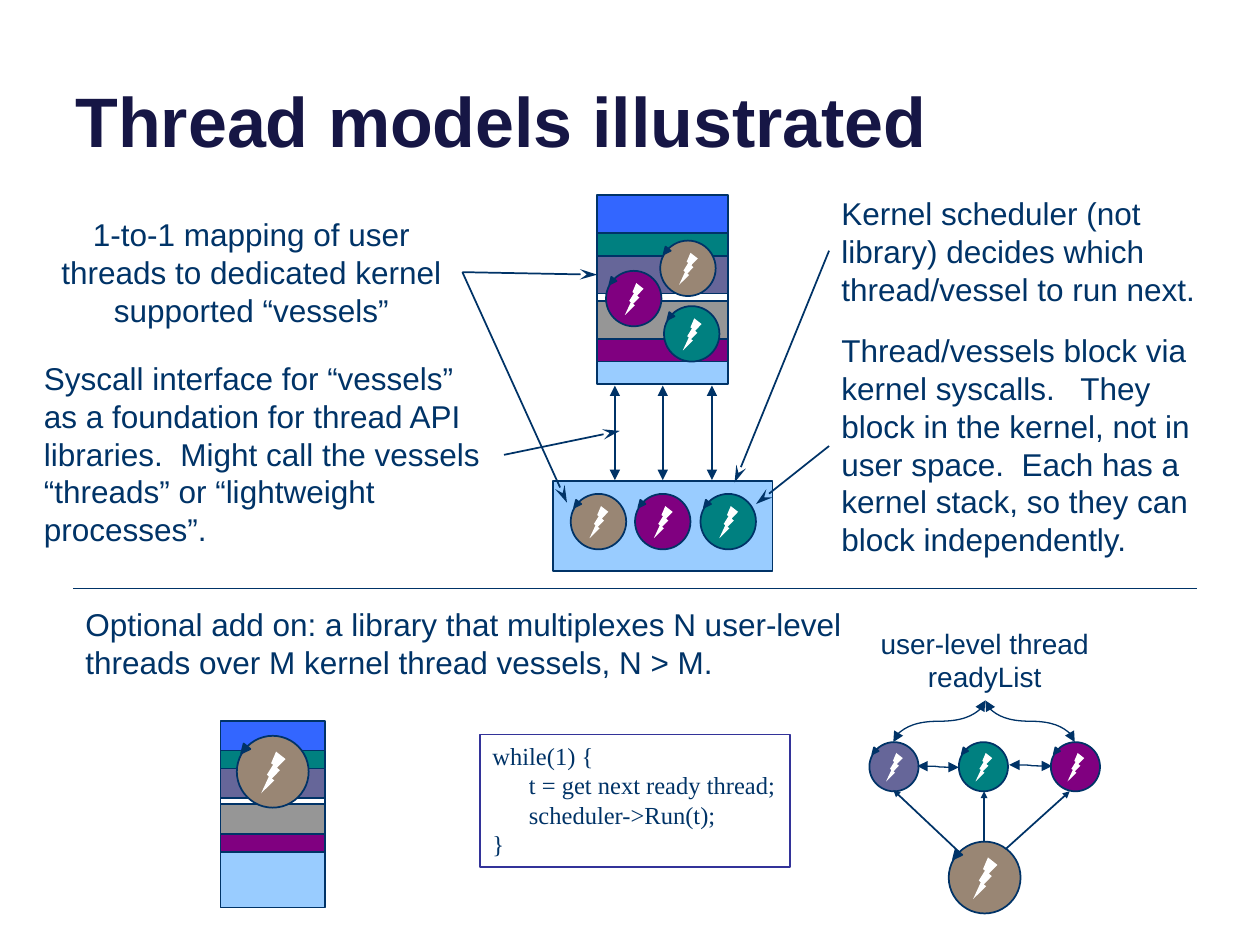
"""Build the slide that illustrates thread models."""
from lxml import etree
from pptx import Presentation
from pptx.dml.color import RGBColor
from pptx.enum import shapes, text
from pptx.oxml import ns
from pptx.util import Inches, Pt

INK = RGBColor(0x00, 0x33, 0x67)
NAVY = RGBColor(0x16, 0x16, 0x45)
EDGE = RGBColor(0x33, 0x33, 0x99)
SKY = RGBColor(0x99, 0xCC, 0xFF)
BLUE = RGBColor(0x33, 0x66, 0xFF)
SLATE = RGBColor(0x66, 0x66, 0x99)
GRAY = RGBColor(0x96, 0x96, 0x96)
PLUM = RGBColor(0x80, 0x00, 0x80)
TEAL = RGBColor(0x00, 0x80, 0x80)
TAN = RGBColor(0x99, 0x86, 0x74)
WHITE = RGBColor(0xFF, 0xFF, 0xFF)

KIND = shapes.MSO_SHAPE
LINK = shapes.MSO_CONNECTOR
ALIGN = text.PP_ALIGN
BANDS = [(BLUE, 0.3), (TEAL, 0.18), (SLATE, 0.3), (WHITE, 0.06),
         (GRAY, 0.3), (PLUM, 0.18)]


class Deck:
    def __init__(self):
        self.prs = Presentation()
        self.prs.slide_width = Inches(10)
        self.prs.slide_height = Inches(7.5)
        self.slide = self.prs.slides.add_slide(self.prs.slide_layouts[5])
        self.items = self.slide.shapes

    def run(self, para, words, size, color=INK, font="Arial", bold=False):
        run = para.add_run()
        run.text = words
        run.font.size = Pt(size)
        run.font.name = font
        run.font.bold = bold
        run.font.color.rgb = color

    def title(self, words, left, top, width, height):
        box = self.items.title
        box.left, box.top = Inches(left), Inches(top)
        box.width, box.height = Inches(width), Inches(height)
        frame = box.text_frame
        frame.auto_size = text.MSO_AUTO_SIZE.NONE
        frame.vertical_anchor = text.MSO_ANCHOR.BOTTOM
        para = frame.paragraphs[0]
        para.alignment = ALIGN.LEFT
        self.run(para, words, 40, NAVY, bold=True)

    def note(self, words, left, top, width, height, size=18, align=ALIGN.LEFT):
        box = self.items.add_textbox(*map(Inches, (left, top, width, height)))
        frame = box.text_frame
        frame.word_wrap = True
        frame.auto_size = text.MSO_AUTO_SIZE.SHAPE_TO_FIT_TEXT
        para = frame.paragraphs[0]
        para.alignment = align
        self.run(para, words, size)

    def shape(self, kind, left, top, width, height, fill, line=INK, home=None):
        item = (home or self.items).add_shape(
            kind, *map(Inches, (left, top, width, height)))
        item.shadow.inherit = False
        item.fill.solid()
        item.fill.fore_color.rgb = fill
        if line is None:
            item.line.fill.background()
        else:
            item.line.color.rgb = line
            item.line.width = Pt(1)
        return item

    def code(self, lines, left, top, width, height):
        box = self.shape(KIND.RECTANGLE, left, top, width, height, WHITE, EDGE)
        frame = box.text_frame
        frame.word_wrap = False
        frame.vertical_anchor = text.MSO_ANCHOR.TOP
        for spot, (words, indent) in enumerate(lines):
            para = frame.add_paragraph() if spot else frame.paragraphs[0]
            para.alignment = ALIGN.LEFT
            para._p.get_or_add_pPr().set("marL", str(Inches(indent)))
            self.run(para, words, 14, font="Times New Roman")

    def stack(self, left, top, width, scale, last):
        for fill, size in BANDS:
            self.shape(KIND.FLOWCHART_PROCESS, left, top, width, size * scale, fill)
            top += size * scale
        self.shape(KIND.FLOWCHART_PROCESS, left, top, width, last, SKY)

    def thread(self, left, top, size, fill):
        home = self.items.add_group_shape().shapes
        self.shape(KIND.OVAL, left, top, size, size, fill, home=home)
        bolt = self.shape(KIND.LIGHTNING_BOLT, left + 0.34 * size, top + 0.22 * size,
                          0.34 * size, 0.58 * size, WHITE, None, home)
        bolt._element.spPr.find(ns.qn("a:xfrm")).set("flipH", "1")
        tip = self.shape(KIND.ISOSCELES_TRIANGLE, left + 0.04 * size, top + 0.13 * size,
                         0.12 * size, 0.13 * size, INK, home=home)
        tip.rotation = 219

    def link(self, start, end, head=None, tail=None, weight=1, size="med",
             kind=LINK.STRAIGHT):
        item = self.items.add_connector(kind, *map(Inches, (*start, *end)))
        item.line.color.rgb = INK
        item.line.width = Pt(weight)
        props = item._element.spPr
        for tag, style in (("a:headEnd", head), ("a:tailEnd", tail)):
            if style:
                span = "lg" if style == "stealth" else size
                etree.SubElement(props.find(ns.qn("a:ln")), ns.qn(tag),
                                 type=style, w=size, len=span)
        etree.SubElement(props, ns.qn("a:effectLst"))
        return item

    def arc(self, start, end):
        midx, midy = (start[0] + end[0]) / 2, (start[1] + end[1]) / 2
        sign = 1 if end[0] > start[0] else -1
        dx, dy = sign * (start[1] - midy), sign * (midx - start[0])
        item = self.link((midx + dx, midy + dy), (midx - dx, midy - dy),
                         "triangle", "triangle", 0.75, kind=LINK.CURVE)
        turn = 90 if sign > 0 else 270
        item._element.spPr.find(ns.qn("a:xfrm")).set("rot", str(turn * 60000))


def main():
    deck = Deck()
    deck.title("Thread models illustrated", 0.5, -0.37, 9, 1.7)

    deck.shape(KIND.FLOWCHART_PROCESS, 4.39, 3.82, 1.74, 0.71, SKY)
    deck.stack(4.74, 1.55, 1.04, 1, 0.18)
    for left, top, fill in ((4.53, 3.92, TAN), (5.04, 3.92, PLUM), (5.56, 3.92, TEAL),
                            (5.24, 1.91, TAN), (4.81, 2.15, PLUM), (5.27, 2.43, TEAL)):
        deck.thread(left, top, 0.44, fill)
    for x in (4.88, 5.26, 5.65):
        deck.link((x, 3.06), (x, 3.81), "triangle", "triangle")

    for left, fill in ((6.9, SLATE), (7.61, TEAL), (8.34, PLUM)):
        deck.thread(left, 5.89, 0.39, fill)
    for start, end in (((7.28, 6.08), (7.61, 6.09)), ((8.01, 6.07), (8.35, 6.08))):
        deck.link(start, end, "triangle", "triangle", 0.75, kind=LINK.CURVE)
    for x in (7.09, 8.53):
        deck.arc((x, 5.89), (7.82, 5.56))
    deck.note("user-level thread readyList", 6.75, 4.92, 2.13, 0.64, 16, ALIGN.CENTER)

    deck.stack(1.75, 5.72, 0.83, 0.79, 0.44)
    deck.thread(1.88, 5.84, 0.57, TAN)
    deck.thread(7.53, 6.68, 0.57, TAN)
    for start, end in (((7.61, 6.76), (7.09, 6.27)), ((7.81, 6.68), (7.81, 6.28)),
                       ((7.98, 6.74), (8.49, 6.28))):
        deck.link(start, end, tail="triangle", size="sm")
    deck.code([("while(1) {", 0), ("t = get next ready thread;", 0.29),
               ("scheduler->Run(t);", 0.29), ("}", 0)], 3.81, 5.83, 2.46, 1.05)
    deck.link((0.58, 4.67), (9.5, 4.67), weight=0.75)

    deck.note("Optional add on: a library that multiplexes N user-level threads "
              "over M kernel thread vessels, N > M.", 0.58, 4.75, 6.33, 0.71)
    deck.note("1-to-1 mapping of user threads to dedicated kernel supported “vessels”",
              0.33, 1.66, 3.33, 1.01, align=ALIGN.CENTER)
    deck.note("Thread/vessels block via kernel syscalls.   They block in the kernel, "
              "not in user space.  Each has a kernel stack, so they can block "
              "independently.", 6.58, 2.58, 3.17, 1.92)
    deck.note("Syscall interface for “vessels” as a foundation for thread API "
              "libraries.  Might call the vessels “threads” or “lightweight "
              "processes”.", 0.25, 2.8, 3.75, 1.62)
    deck.note("Kernel scheduler (not library) decides which thread/vessel to run next.",
              6.58, 1.49, 3.17, 1.01)
    for start, end in (((4.74, 2.18), (3.67, 2.16)), ((4.5, 3.99), (3.67, 2.16)),
                       ((4.92, 3.42), (4, 3.61)), ((6, 4), (6.58, 3.54)),
                       ((5.83, 3.83), (6.58, 1.99))):
        deck.link(start, end, head="stealth")

    deck.prs.save("out.pptx")


if __name__ == "__main__":
    main()
